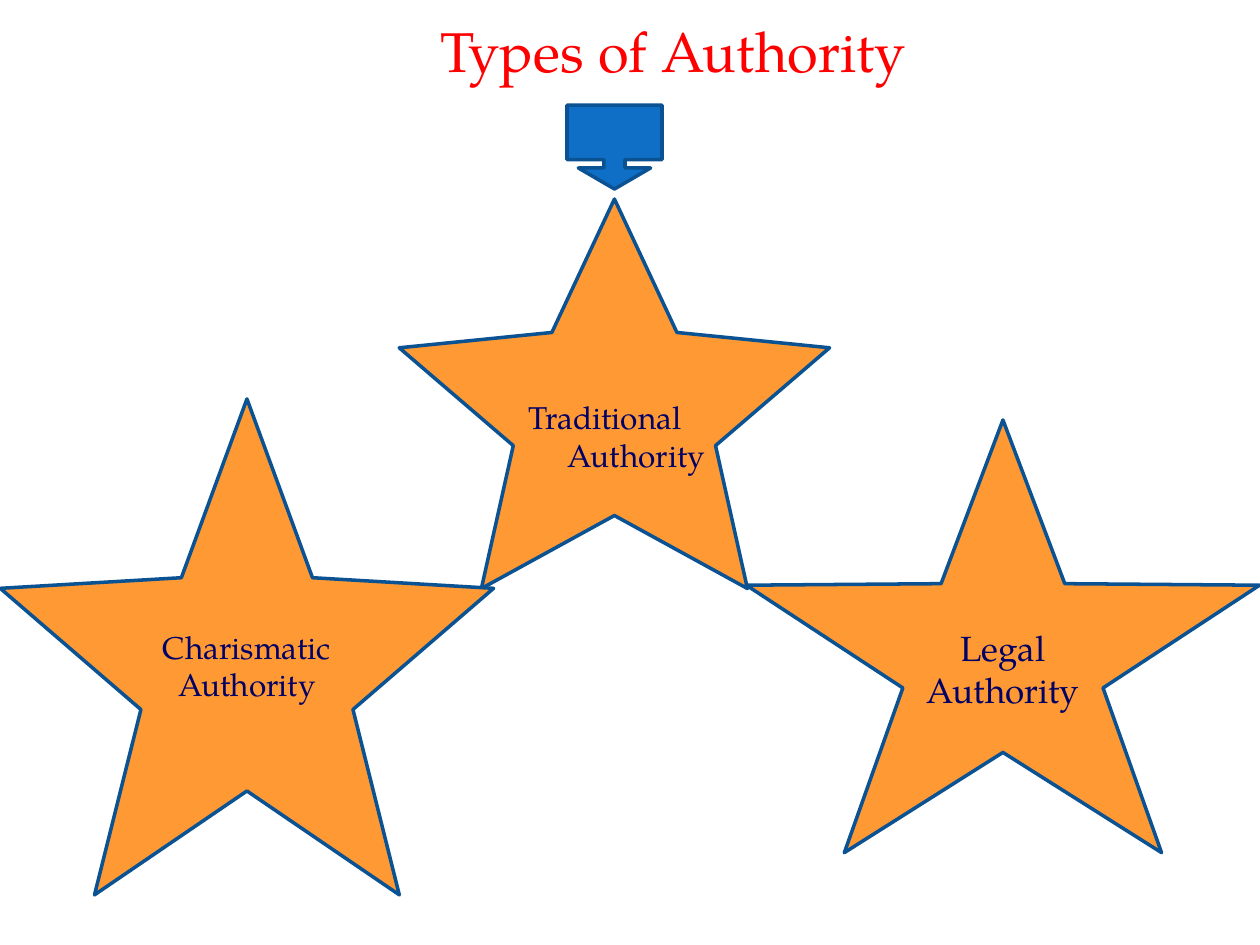
from dataclasses import dataclass

from pptx import Presentation
from pptx import util as u
from pptx.dml.color import RGBColor
from pptx.enum import shapes, text

SCALE = 914400 // 126


@dataclass(frozen=True)
class Theme:
    font: str = "TeX Gyre Pagella"
    title_color: str = "FF0000"
    label_color: str = "000066"
    star_fill: str = "FF9933"
    arrow_fill: str = "0F6FC6"
    outline: str = "0B5292"
    outline_width: int = 2
    title_size: int = 32
    label_size: int = 18
    large_label_size: int = 20


def px(length):
    return u.Emu(length * SCALE)


class SlideBuilder:
    def __init__(self, slide, theme):
        self.slide = slide
        self.theme = theme

    def add_lines(self, shape, lines, size, color, anchor,
                  alignment=text.PP_ALIGN.LEFT):
        """Fill a shape with (wording, left indent in px) lines."""
        frame = shape.text_frame
        frame.word_wrap = True
        frame.auto_size = text.MSO_AUTO_SIZE.NONE
        frame.vertical_anchor = anchor
        for index, (wording, indent) in enumerate(lines):
            paragraph = frame.add_paragraph() if index else frame.paragraphs[0]
            paragraph.alignment = alignment
            properties = paragraph._p.get_or_add_pPr()
            properties.set("marL", str(px(indent)))
            properties.set("indent", "0")
            run = paragraph.add_run()
            run.text = wording
            run.font.name = self.theme.font
            run.font.size = u.Pt(size)
            run.font.color.rgb = RGBColor.from_string(color)

    def title(self, box, wording, indent):
        shape = self.slide.shapes.title
        shape.left, shape.top, shape.width, shape.height = map(px, box)
        self.add_lines(shape, [(wording, indent)], self.theme.title_size,
                       self.theme.title_color, text.MSO_ANCHOR.TOP)

    def preset(self, kind, box, fill, adjustments):
        shape = self.slide.shapes.add_shape(kind, *map(px, box))
        shape.shadow.inherit = False
        for index, value in enumerate(adjustments):
            shape.adjustments[index] = value
        shape.fill.solid()
        shape.fill.fore_color.rgb = RGBColor.from_string(fill)
        shape.line.color.rgb = RGBColor.from_string(self.theme.outline)
        shape.line.width = u.Pt(self.theme.outline_width)
        return shape

    def star(self, box, depth, lines=(), size=None, lift=0):
        """Draw a star; lift adds bottom margin, which raises its label."""
        shape = self.preset(shapes.MSO_SHAPE.STAR_5_POINT, box,
                            self.theme.star_fill, (depth, 1.05, 1.11))
        if lines:
            shape.text_frame.margin_bottom = px(6 + lift)
            self.add_lines(shape, [(line, 0) for line in lines], size,
                           self.theme.label_color, text.MSO_ANCHOR.MIDDLE,
                           text.PP_ALIGN.CENTER)

    def arrow(self, box):
        self.preset(shapes.MSO_SHAPE.DOWN_ARROW_CALLOUT, box,
                    self.theme.arrow_fill, (0.25, 0.43, 0.25, 0.65))

    def label(self, box, lines):
        shape = self.slide.shapes.add_textbox(*map(px, box))
        self.add_lines(shape, lines, self.theme.label_size,
                       self.theme.label_color, text.MSO_ANCHOR.BOTTOM)


def main():
    presentation = Presentation()
    presentation.slide_width = px(1260)
    presentation.slide_height = px(945)
    theme = Theme()
    slide = presentation.slides.add_slide(presentation.slide_layouts[5])
    builder = SlideBuilder(slide, theme)

    builder.title((273, 10, 892, 81), "Types of Authority", 155)
    builder.star((399, 199, 431, 388), 0.235)
    builder.star((0, 399, 494, 494), 0.215, ["Charismatic", "Authority"],
                 theme.label_size, lift=38)
    builder.star((746, 420, 514, 431), 0.195, ["Legal Authority"],
                 theme.large_label_size)
    builder.label((478, 315, 305, 165), [("Traditional", 38), ("Authority", 77)])
    builder.arrow((567, 105, 95, 84))

    presentation.save("out.pptx")


if __name__ == "__main__":
    main()
